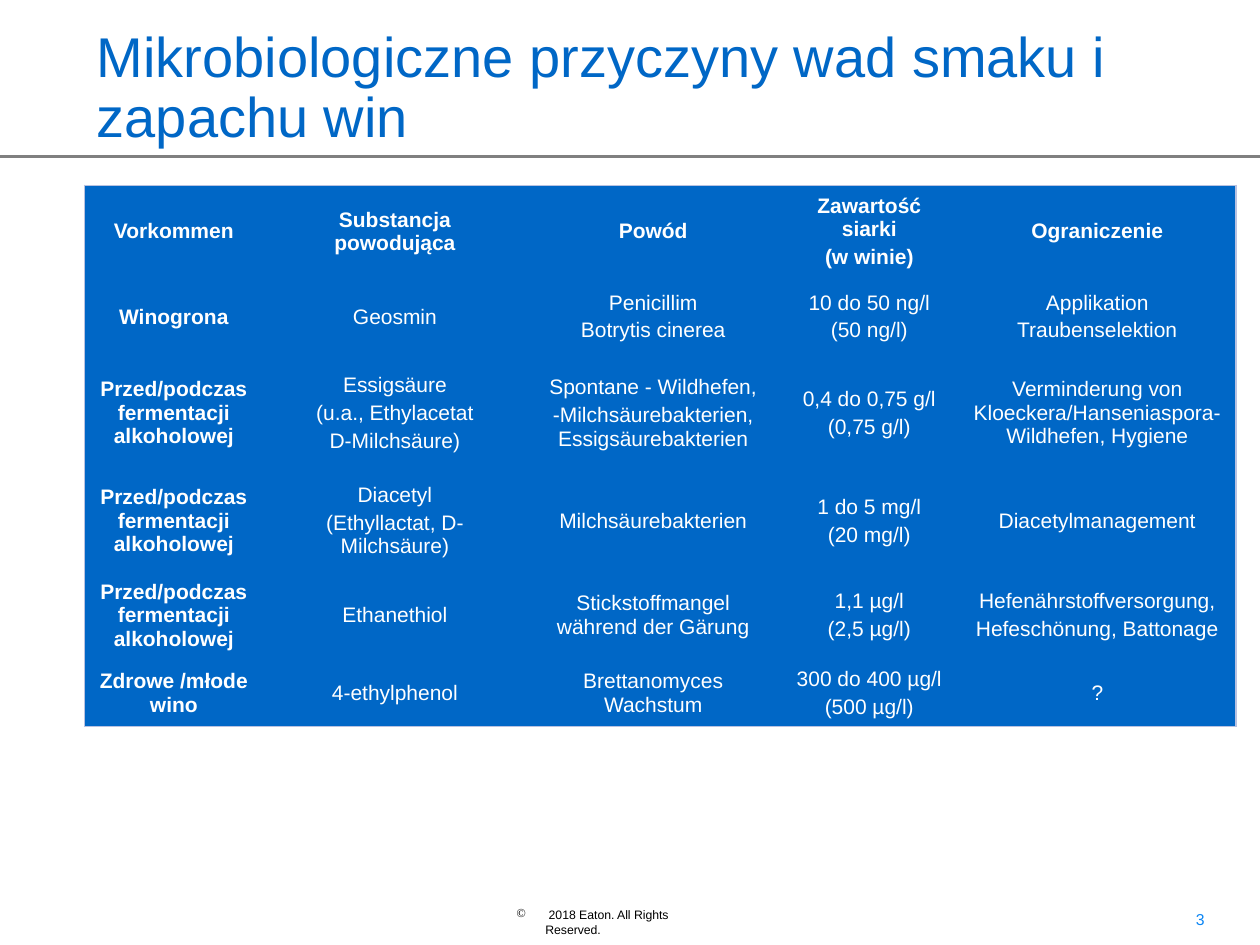
from dataclasses import dataclass
from typing import Any

from lxml.etree import SubElement
from pptx import Presentation
from pptx.dml.color import RGBColor as Rgb
from pptx.enum.text import MSO_ANCHOR as Anchor, PP_ALIGN as Align
from pptx.oxml import parse_xml
from pptx.oxml.ns import nsdecls, qn
from pptx.util import Inches, Pt


@dataclass(frozen=True)
class Theme:
    font: str = "Arial"
    blue: Rgb = Rgb(0x00, 0x67, 0xC6)
    number_blue: Rgb = Rgb(0x0C, 0x86, 0xF4)
    rule: Rgb = Rgb(0x80, 0x80, 0x80)
    border: Rgb = Rgb(0xB8, 0xC2, 0xE1)
    white: Rgb = Rgb(0xFF, 0xFF, 0xFF)
    black: Rgb = Rgb(0, 0, 0)
    title_size: float = 32
    table_size: float = 12
    number_size: float = 9
    footer_size: float = 7


@dataclass(frozen=True)
class Label:
    text: str
    left: float
    top: float
    width: float
    height: float
    size: float
    color: Rgb
    align: Align = Align.LEFT
    anchor: Anchor = Anchor.TOP
    line_spacing: float = 1.0
    bullet: str = ""


THEME = Theme()
LABELS = [
    Label("3", 7.33, 7.17, 2.33, 0.3, THEME.number_size, THEME.number_blue, align=Align.RIGHT),
    Label(" 2018 Eaton. All Rights Reserved.", 4, 7.15, 1.75, 0.22,
          THEME.footer_size, THEME.black, bullet="©"),
    Label("Mikrobiologiczne przyczyny wad smaku i zapachu win", 0.67, 0.44, 9.04, 0.8,
          THEME.title_size, THEME.blue, anchor=Anchor.BOTTOM, line_spacing=0.9),
]
FERMENTATION = "Przed/podczas fermentacji alkoholowej"
WINE_FAULTS = [
    ["Vorkommen", "Substancja powodująca", "Powód", "Zawartość siarki\n(w winie)", "Ograniczenie"],
    ["Winogrona", "Geosmin", "Penicillim\nBotrytis cinerea", "10 do 50 ng/l\n(50 ng/l)",
     "Applikation\nTraubenselektion"],
    [FERMENTATION, "Essigsäure\n(u.a., Ethylacetat\nD-Milchsäure)",
     "Spontane - Wildhefen,\n-Milchsäurebakterien, Essigsäurebakterien",
     "0,4 do 0,75 g/l\n(0,75 g/l)", "Verminderung von Kloeckera/Hanseniaspora-Wildhefen, Hygiene"],
    [FERMENTATION, "Diacetyl\n(Ethyllactat, D-Milchsäure)", "Milchsäurebakterien",
     "1 do 5 mg/l\n(20 mg/l)", "Diacetylmanagement"],
    [FERMENTATION, "Ethanethiol", "Stickstoffmangel während der Gärung",
     "1,1 µg/l\n(2,5 µg/l)", "Hefenährstoffversorgung,\nHefeschönung, Battonage"],
    ["Zdrowe /młode wino", "4-ethylphenol", "Brettanomyces Wachstum",
     "300 do 400 µg/l\n(500 µg/l)", "?"],
]
COLUMN_WIDTHS = [1.42, 2.09, 2.01, 1.42, 2.2]
ROW_HEIGHTS = [0.7, 0.62, 0.91, 0.8, 0.67, 0.51]


def apply_format(target: Any, values: dict[str, Any]) -> None:
    """Set each named attribute of the target."""
    for name, value in values.items():
        setattr(target, name, value)


def style_font(font: Any, size: float, color: Rgb, bold: bool = False) -> None:
    """Give a font the theme face, a size, a weight and a colour."""
    apply_format(font, {"name": THEME.font, "size": Pt(size), "bold": bold})
    font.color.rgb = color


def add_rule(slide: Any, top: float) -> None:
    """Draw the grey rule across the slide."""
    rule = slide.shapes.add_connector(1, 0, Inches(top), Inches(10), Inches(top))
    rule.line.color.rgb = THEME.rule
    rule.line.width = Pt(1.5)
    SubElement(rule._element.spPr, qn("a:effectLst"))


def add_label(slide: Any, label: Label) -> None:
    """Place one line of text in a wrapping box."""
    box = slide.shapes.add_textbox(*map(Inches, (label.left, label.top, label.width, label.height)))
    apply_format(box.text_frame, {"word_wrap": True, "vertical_anchor": label.anchor})
    paragraph = box.text_frame.paragraphs[0]
    apply_format(paragraph, {"text": label.text, "alignment": label.align,
                             "line_spacing": label.line_spacing})
    if label.bullet:
        properties = paragraph._p.get_or_add_pPr()
        properties.set("marL", str(Inches(0.23)))
        properties.set("indent", str(-Inches(0.23)))
        SubElement(properties, qn("a:buChar"), char=label.bullet)
    style_font(paragraph.runs[0].font, label.size, label.color)


def set_borders(cell: Any, outer_sides: dict[str, bool]) -> None:
    """Outline the outer sides of a cell and clear its inner sides."""
    for position, (side, is_outer) in enumerate(outer_sides.items()):
        paint = (f'<a:solidFill><a:srgbClr val="{THEME.border}"/></a:solidFill>'
                 if is_outer else "<a:noFill/>")
        line = parse_xml(f'<a:ln{side} {nsdecls("a")} w="{Pt(0.75)}">{paint}</a:ln{side}>')
        cell._tc.get_or_add_tcPr().insert(position, line)


def fill_cell(cell: Any, text: str, bold: bool) -> None:
    """Write centred paragraphs on the blue cell."""
    cell.fill.solid()
    cell.fill.fore_color.rgb = THEME.blue
    apply_format(cell, {"text": text, "vertical_anchor": Anchor.MIDDLE})
    for index, paragraph in enumerate(cell.text_frame.paragraphs):
        space = Pt(0.2 * THEME.table_size) if index else Pt(0)
        apply_format(paragraph, {"alignment": Align.CENTER, "space_before": space})
        style_font(paragraph.runs[0].font, THEME.table_size, THEME.white, bold)


def add_fault_table(slide: Any, left: float, top: float) -> None:
    """Draw the table of wine faults."""
    last_row, last_column = len(ROW_HEIGHTS) - 1, len(COLUMN_WIDTHS) - 1
    table = slide.shapes.add_table(
        last_row + 1, last_column + 1, Inches(left), Inches(top),
        Inches(sum(COLUMN_WIDTHS)), Inches(sum(ROW_HEIGHTS))).table
    apply_format(table, {"first_row": False, "horz_banding": False})
    for column, width in zip(table.columns, COLUMN_WIDTHS):
        column.width = Inches(width)
    for row, height in zip(table.rows, ROW_HEIGHTS):
        row.height = Inches(height)
    for r, texts in enumerate(WINE_FAULTS):
        for c, text in enumerate(texts):
            cell = table.cell(r, c)
            fill_cell(cell, text, bold=r == 0 or c == 0)
            set_borders(cell, {"L": c == 0, "R": c == last_column,
                               "T": r == 0, "B": r == last_row})


def main() -> None:
    """Build and save the slide."""
    deck = Presentation()
    apply_format(deck, {"slide_width": Inches(10), "slide_height": Inches(7.5)})
    slide = deck.slides.add_slide(deck.slide_layouts[6])
    add_rule(slide, 1.24)
    for label in LABELS:
        add_label(slide, label)
    add_fault_table(slide, 0.67, 1.47)
    deck.save("out.pptx")


if __name__ == "__main__":
    main()
